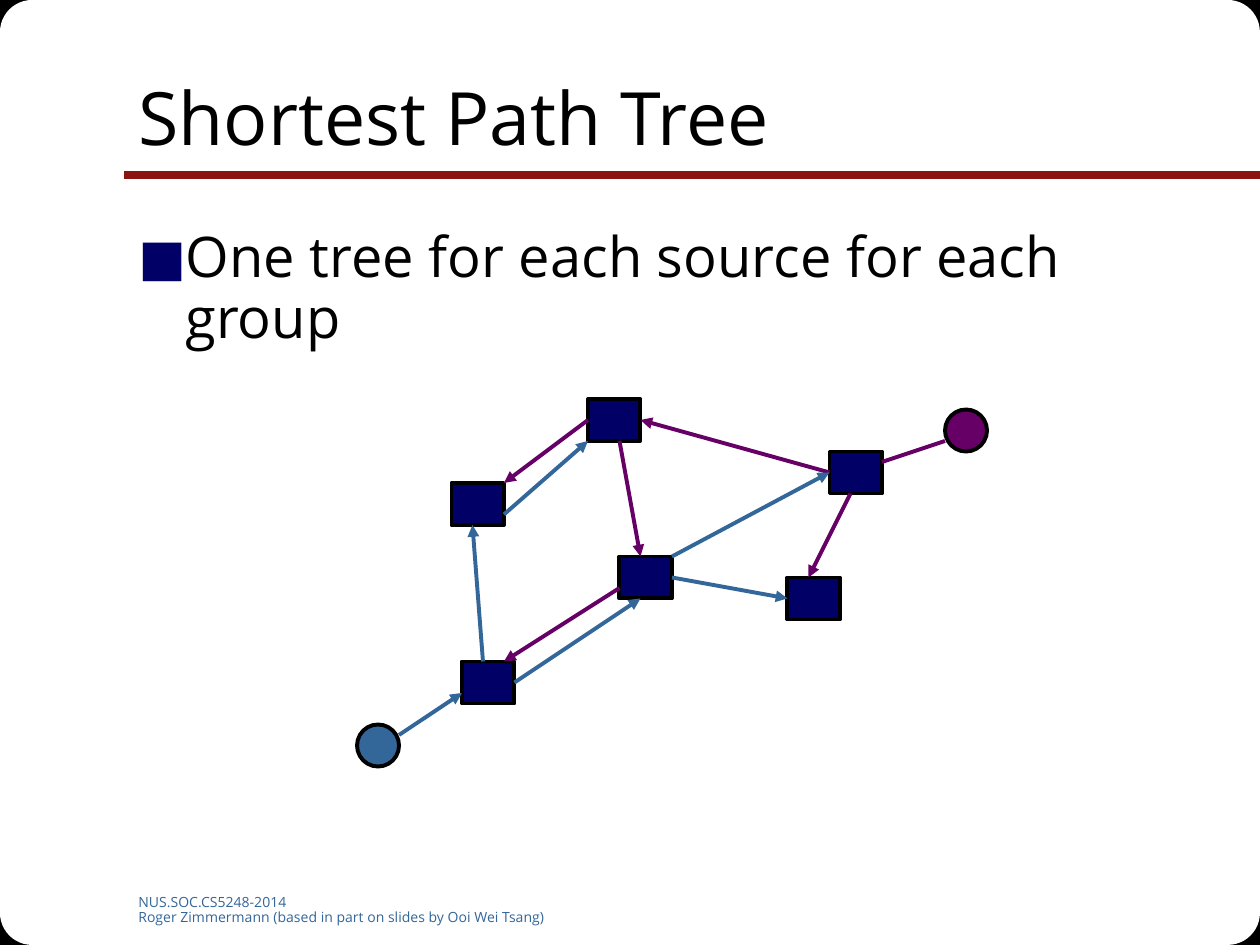
from lxml import etree
from pptx import Presentation
from pptx.dml.color import RGBColor
from pptx.enum.shapes import MSO_CONNECTOR, MSO_SHAPE
from pptx.enum.text import MSO_ANCHOR
from pptx.oxml.ns import qn
from pptx.util import Cm, Pt

RECT, ROUND, OVAL = MSO_SHAPE.RECTANGLE, MSO_SHAPE.ROUNDED_RECTANGLE, MSO_SHAPE.OVAL
STRAIGHT = MSO_CONNECTOR.STRAIGHT
TOP, MIDDLE = MSO_ANCHOR.TOP, MSO_ANCHOR.MIDDLE
LEFT_SIDE, RIGHT_SIDE = 1, 3

COLORS = {"black": "000000", "white": "FFFFFF", "navy": "000066",
          "purple": "660066", "blue": "336699", "red": "891411"}
FONT = "Open Sans"
WIDTH, HEIGHT = 25.4, 19.05
GRID = WIDTH / 120  # the network is laid out on this step, in cm

ROUTERS = {"north": (56, 38), "center": (59, 53), "south": (44, 63),
           "east": (75, 55), "west": (43, 46), "northeast": (79, 43)}
SOURCES = {"purple": (90, 39), "blue": (34, 69)}
# An end is a grid point or a router with the side it is joined to.
TREES = {
    "purple": [
        ((81, 47), (77, 55)),
        (("northeast", LEFT_SIDE), ("north", RIGHT_SIDE)),
        (("north", LEFT_SIDE), (48, 46)),
        ((59, 42), (61, 53)),
        ((59, 56), (48, 63)),
    ],
    "blue": [
        ((38, 70), (44, 66)),
        ((46, 63), (45, 50)),
        (("south", RIGHT_SIDE), (61, 57)),
        (("center", RIGHT_SIDE), ("east", LEFT_SIDE)),
        ((64, 53), ("northeast", LEFT_SIDE)),
        ((48, 49), (56, 42)),
    ],
}


def rgb(color):
    return RGBColor.from_string(COLORS[color])


class SlideBuilder:
    def __init__(self, slide):
        self.slide = slide
        self.routers = {}

    def shape(self, kind, box, fill, outline=None, weight=2.25):
        item = self.slide.shapes.add_shape(kind, *map(Cm, box))
        item.shadow.inherit = False
        item.fill.solid()
        item.fill.fore_color.rgb = rgb(fill)
        if outline:
            item.line.color.rgb = rgb(outline)
            item.line.width = Pt(weight)
        else:
            item.line.fill.background()
        return item

    def node(self, kind, place, size, fill):
        box = [n * GRID for n in (*place, *size)]
        return self.shape(kind, box, fill, "black")

    def line(self, start, end, color, weight=2.25, arrow=False):
        item = self.slide.shapes.add_connector(STRAIGHT, *map(Cm, (*start, *end)))
        item.line.color.rgb = rgb(color)
        item.line.width = Pt(weight)
        if arrow:
            etree.SubElement(item.line._get_or_add_ln(), qn("a:tailEnd"), type="triangle")
        etree.SubElement(item._element.spPr, qn("a:effectLst"))
        return item

    def link(self, start, end, color, arrow=True):
        """Draw a line between two ends, joining those that name a router."""
        points = [(0, 0) if e[0] in self.routers else [n * GRID for n in e]
                  for e in (start, end)]
        item = self.line(*points, color, arrow=arrow)
        for (target, side), join in ((start, item.begin_connect), (end, item.end_connect)):
            if target in self.routers:
                join(self.routers[target], side)

    def text(self, box, lines, size, color="black", anchor=TOP, spacing=1.0):
        frame = self.slide.shapes.add_textbox(*map(Cm, box)).text_frame
        frame.word_wrap = True
        frame.vertical_anchor = anchor
        font_format = {"name": FONT, "size": Pt(size)}
        for i, line in enumerate(lines):
            paragraph = frame.add_paragraph() if i else frame.paragraphs[0]
            paragraph.line_spacing = spacing
            run = paragraph.add_run()
            run.text = line
            for key, value in font_format.items():
                setattr(run.font, key, value)
            run.font.color.rgb = rgb(color)
        return frame

    def bullet(self, paragraph, color):
        props = paragraph._p.get_or_add_pPr()
        indent = Cm(0.95)
        props.set("marL", str(indent))
        props.set("indent", str(-indent))
        bullet_color = etree.SubElement(props, qn("a:buClr"))
        etree.SubElement(bullet_color, qn("a:srgbClr"), val=COLORS[color])
        etree.SubElement(props, qn("a:buSzPct"), val="90000")
        etree.SubElement(props, qn("a:buFont"), typeface=FONT)
        etree.SubElement(props, qn("a:buChar"), char="■")


def add_corners(builder):
    """Round the slide's corners: white rounded squares over black ones."""
    layers = ((RECT, 1.1, "black", "black"), (ROUND, 3.89, "white", None))
    for kind, side, fill, outline in layers:
        for x in (0, WIDTH - side):
            for y in (0, HEIGHT - side):
                builder.shape(kind, (x, y, side, side), fill, outline, 0.75)


def add_network(builder):
    for name, place in ROUTERS.items():
        builder.routers[name] = builder.node(RECT, place, (5, 4), "navy")
    for color, place in SOURCES.items():
        builder.node(OVAL, place, (4, 4), color)
    builder.link((90, 42), (84, 44), "purple", arrow=False)
    for color, links in TREES.items():
        for start, end in links:
            builder.link(start, end, color)


def main():
    deck = Presentation()
    deck.slide_width, deck.slide_height = Cm(WIDTH), Cm(HEIGHT)
    builder = SlideBuilder(deck.slides.add_slide(deck.slide_layouts[6]))

    add_corners(builder)
    builder.line((WIDTH, 3.53), (2.5, 3.53), "red", 4.5)
    builder.text((2.54, 17.93, 9.53, 0.71),
                 ["NUS.SOC.CS5248-2014",
                  "Roger Zimmermann (based in part on slides by Ooi Wei Tsang)"],
                 8, "blue", spacing=0.9)
    builder.text((2.54, 0.76, 21.59, 3.18), ["Shortest Path Tree"], 42, anchor=MIDDLE)
    body = builder.text((2.54, 4.5, 21.59, 12.57),
                        ["One tree for each source for each group"], 32, spacing=0.9)
    builder.bullet(body.paragraphs[0], "navy")
    add_network(builder)

    deck.save("out.pptx")


if __name__ == "__main__":
    main()
